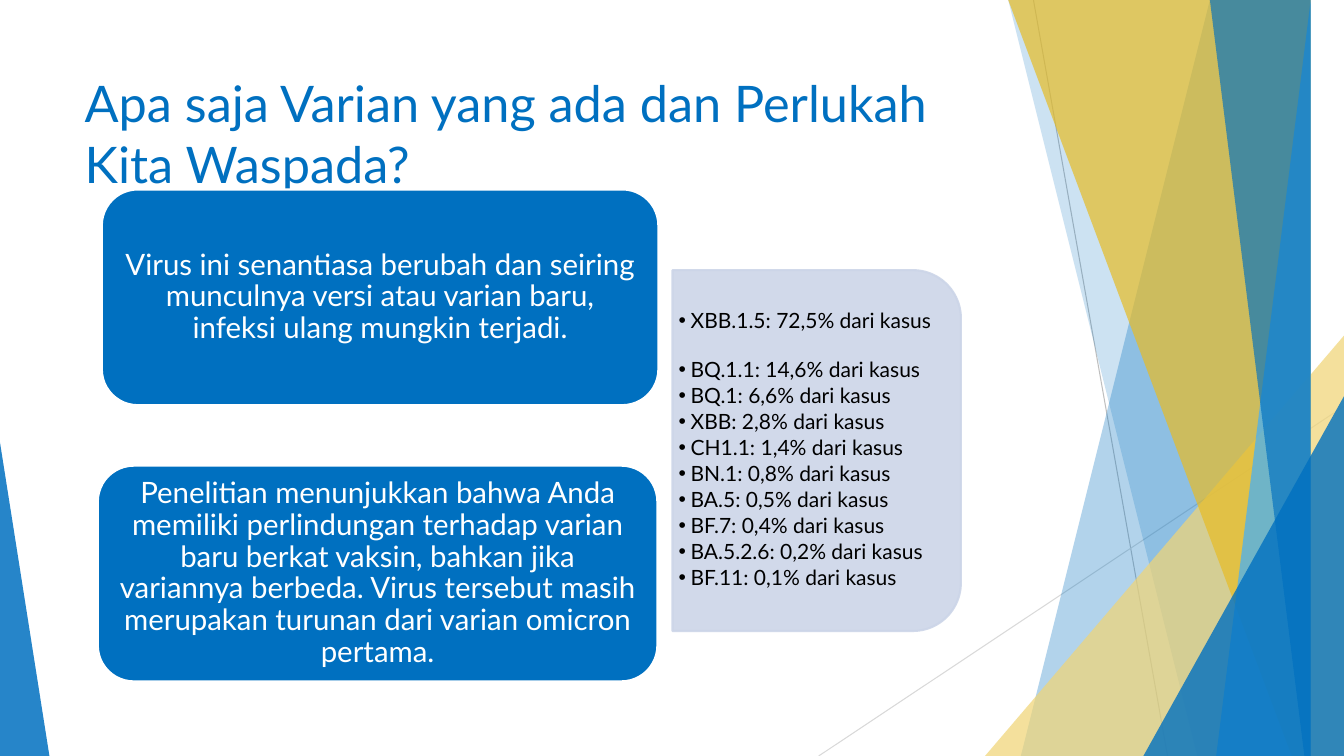
from lxml import etree
from pptx import Presentation
from pptx import util as u
from pptx.dml.color import RGBColor
from pptx.enum import shapes, text
from pptx.oxml.ns import qn

COLORS = {
    "blue": "0070C0", "sky": "40AFFF", "gold": "E7BC26", "sand": "F0D577",
    "panel": "CCD5E8", "white": "FFFFFF", "black": "000000",
    "gray": "BFBFBF", "pale": "D9D9D9",
}
FONT = "Lato"
W, H = 13.33, 7.5
TITLE = "Apa saja Varian yang ada dan Perlukah Kita Waspada?"
NOTES = [
    ("Virus ini senantiasa berubah dan seiring munculnya versi atau varian baru, "
     "infeksi ulang mungkin terjadi.", (1.01, 1.88, 5.52, 2.14)),
    ("Penelitian menunjukkan bahwa Anda memiliki perlindungan terhadap varian baru "
     "berkat vaksin, bahkan jika variannya berbeda. Virus tersebut masih merupakan "
     "turunan dari varian omicron pertama.", (0.97, 4.62, 5.55, 2.14)),
]
VARIANTS = [
    ("XBB.1.5", "72,5"), ("BQ.1.1", "14,6"), ("BQ.1", "6,6"), ("XBB", "2,8"),
    ("CH1.1", "1,4"), ("BN.1", "0,8"), ("BA.5", "0,5"), ("BF.7", "0,4"),
    ("BA.5.2.6", "0,2"), ("BF.11", "0,1"),
]


def rgb(name):
    return RGBColor.from_string(COLORS[name])


def place(sp, box):
    sp.left, sp.top, sp.width, sp.height = map(u.Inches, box)


def set_alpha(fmt_element, percent):
    for clr in fmt_element.iter(qn("a:srgbClr")):
        etree.SubElement(clr, qn("a:alpha")).set("val", str(percent * 1000))


def paint(sp, fill, alpha=100, line=None):
    sp.shadow.inherit = False
    sp.fill.solid()
    sp.fill.fore_color.rgb = rgb(fill)
    if line:
        sp.line.color.rgb = rgb(line)
        sp.line.width = u.Pt(1.5)
    else:
        sp.line.fill.background()
    if alpha < 100:
        set_alpha(sp.element.spPr, alpha)


def write(tf, lines, size, color, align=text.PP_ALIGN.LEFT, spacing=None, after=0,
          anchor=text.MSO_ANCHOR.MIDDLE, margins=(0.1, 0.05)):
    tf.word_wrap = True
    tf.auto_size = text.MSO_AUTO_SIZE.NONE
    tf.vertical_anchor = anchor
    tf.margin_left = tf.margin_right = u.Inches(margins[0])
    tf.margin_top = tf.margin_bottom = u.Inches(margins[1])
    for i, line in enumerate(lines):
        p = tf.add_paragraph() if i else tf.paragraphs[0]
        p.alignment = align
        p.space_before, p.space_after = u.Pt(0), u.Pt(after)
        if spacing:
            p.line_spacing = spacing
        r = p.add_run()
        r.text = line
        r.font.name, r.font.size = FONT, u.Pt(size)
        r.font.color.rgb = rgb(color)


def add_bullet(p):
    pPr = p._p.get_or_add_pPr()
    pPr.set("marL", str(u.Inches(0.12)))
    pPr.set("indent", str(-u.Inches(0.12)))
    etree.SubElement(pPr, qn("a:buFont")).set("typeface", "Arial")
    etree.SubElement(pPr, qn("a:buChar")).set("char", "•")


def hairline(s, start, end, color):
    cx = s.shapes.add_connector(shapes.MSO_CONNECTOR.STRAIGHT,
                                *map(u.Inches, start + end))
    cx.line.color.rgb = rgb(color)
    cx.line.width = u.Pt(0.75)
    etree.SubElement(cx.element.spPr, qn("a:effectLst"))


def band(s, top_left, bottom_left, color, alpha):
    """Sloping left edge, running out to the right edge of the slide."""
    fb = s.shapes.build_freeform(top_left, 0, scale=u.Inches(1))
    fb.add_line_segments([(W, 0), (W, H), (bottom_left, H)], close=True)
    paint(fb.convert_to_shape(), color, alpha)


def corner(s, box, peak, color, alpha):
    sp = s.shapes.add_shape(shapes.MSO_SHAPE.ISOSCELES_TRIANGLE, *map(u.Inches, box))
    sp.adjustments[0] = peak
    paint(sp, color, alpha)


def decoration(s, box):
    x, y, w, h = box
    right, bottom = x + w, y + h
    hairline(s, (10.25, y), (11.58, bottom), "gray")
    hairline(s, (right, 4.03), (8.12, bottom), "pale")
    band(s, 12.28, 10.04, "blue", 30)
    band(s, 10.5, 11.83, "blue", 20)
    corner(s, (right - 3.56, bottom - 4.17, 3.56, 4.17), 1, "sand", 72)
    band(s, 10.21, 12.91, "gold", 70)
    band(s, 13.03, 11.92, "sky", 70)
    band(s, 11.96, 13.18, "blue", 65)
    corner(s, (right - 1.99, bottom - 3.57, 1.99, 3.57), 1, "blue", 80)
    corner(s, (x, bottom - 3.11, 0.49, 3.11), 0, "blue", 85)


def title(s, box):
    sp = s.shapes.title
    place(sp, box)
    write(sp.text_frame, [TITLE], 36, "blue", anchor=text.MSO_ANCHOR.TOP)


def variant_panel(s, box):
    x, y, w, h = box
    # The panel is turned a quarter, so its frame swaps width and height
    frame = (x + (w - h) / 2, y + (h - w) / 2, h, w)
    sp = s.shapes.add_shape(shapes.MSO_SHAPE.ROUND_2_SAME_RECTANGLE,
                            *map(u.Inches, frame))
    sp.rotation = 90
    paint(sp, "panel", 90, line="panel")

    body = s.placeholders[1]
    place(body, (x, y + 0.14, w - 0.14, h - 0.28))
    body.element.getparent().append(body.element)  # bring in front of the panel
    lines = [f"{name}: {share}% dari kasus" for name, share in VARIANTS]
    write(body.text_frame, lines, 15, "black", spacing=0.9, after=2.4,
          margins=(0.06, 0.03))
    for p in body.text_frame.paragraphs:
        add_bullet(p)
    # The dominant variant stands apart
    body.text_frame.paragraphs[0].space_after = u.Pt(18.4)


def note(s, words, box):
    sp = s.shapes.add_shape(shapes.MSO_SHAPE.ROUNDED_RECTANGLE, *map(u.Inches, box))
    paint(sp, "blue", line="white")
    write(sp.text_frame, [words], 21, "white", align=text.PP_ALIGN.CENTER,
          spacing=0.9, margins=(0.09, 0.04))


def main():
    prs = Presentation()
    prs.slide_width, prs.slide_height = u.Inches(W), u.Inches(H)
    s = prs.slides.add_slide(prs.slide_layouts[1])
    decoration(s, (0, 0, W, H))
    title(s, (0.74, 0.67, 9.4, 1.44))
    variant_panel(s, (6.67, 2.68, 2.86, 3.58))
    for words, box in NOTES:
        note(s, words, box)
    prs.save("out.pptx")


if __name__ == "__main__":
    main()
